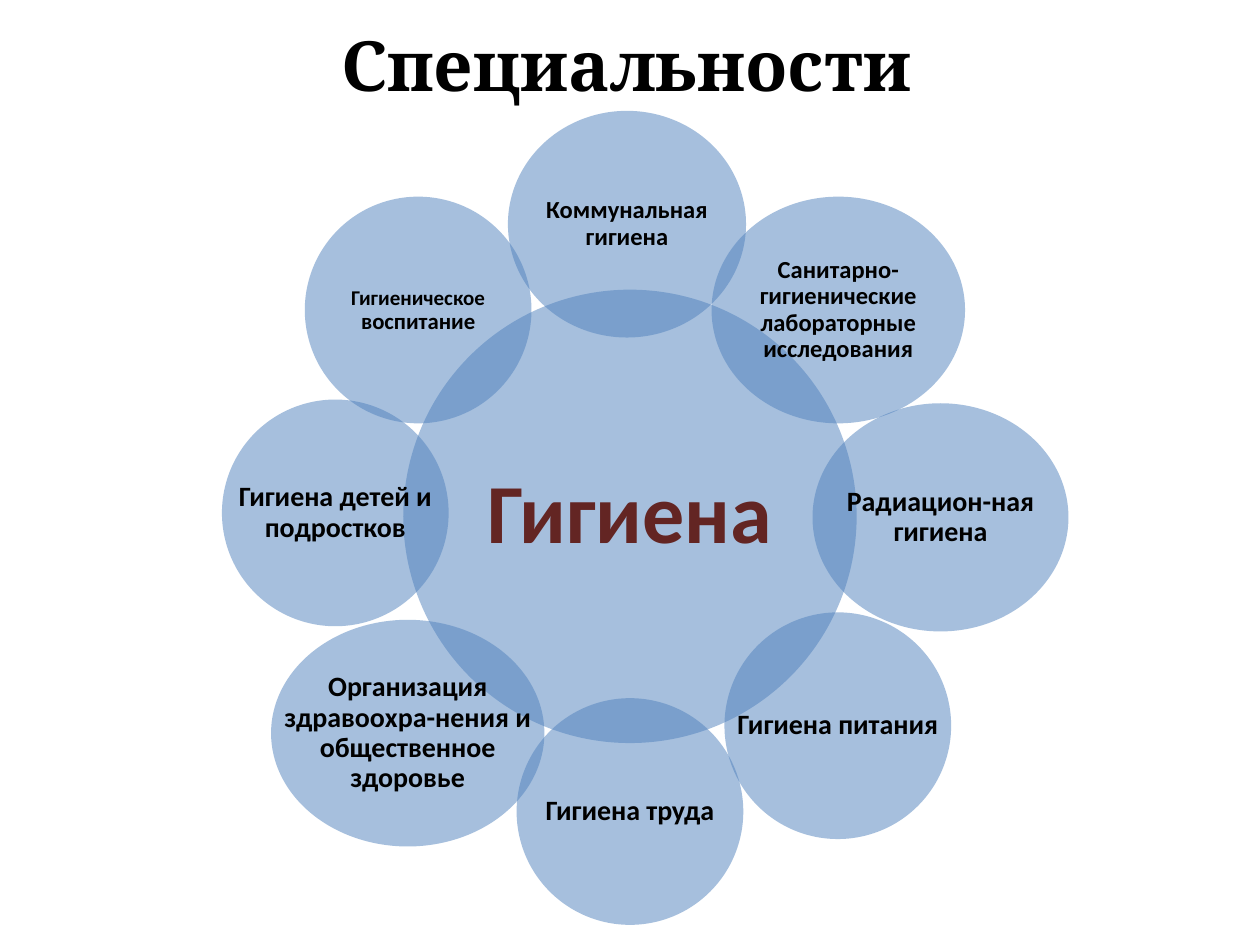
from dataclasses import dataclass

import pptx
import pptx.dml.color
import pptx.enum.shapes
import pptx.enum.text
import pptx.oxml.ns
import pptx.util
from lxml import etree

Cm = pptx.util.Cm


@dataclass(frozen=True)
class Theme:
    circle: str = "4F81BD"
    opacity: int = 50
    black: str = "000000"
    accent: str = "632523"
    heading_font: str = "Cambria"
    body_font: str = "Calibri"
    title: float = 39.6
    hub: float = 48
    large: float = 16
    medium: float = 14
    small: float = 13
    tiny: float = 12


THEME = Theme()


@dataclass(frozen=True)
class Circle:
    """An ellipse given by its centre, in cm, with (text, size) runs."""
    x: float
    y: float
    runs: tuple[tuple[str, float], ...]
    width: float = 4.57
    height: float = 4.57
    color: str = THEME.black
    inset: float = 0.05

    @property
    def box(self) -> tuple[int, int, int, int]:
        return (Cm(self.x - self.width / 2), Cm(self.y - self.height / 2),
                Cm(self.width), Cm(self.height))


HUB = Circle(12.7, 10.41, (("Гигиена", THEME.hub),), 9.14, 9.14,
             THEME.accent, 0.18)
SPECIALTIES = (
    Circle(12.64, 4.52, (("Коммунальная гигиена", THEME.medium),), 4.8),
    Circle(16.9, 6.25, (("Санитарно-гигиенические лабораторные исследования",
                         THEME.medium),), 5.11),
    Circle(18.96, 10.43, (("Радиацион-ная гигиена", THEME.large),), 5.16, 4.6),
    Circle(16.89, 14.63, (("Гигиена питания", THEME.large),)),
    Circle(12.7, 16.36, (("Гигиена труда", THEME.large),)),
    Circle(6.76, 10.34, (("Гигиена детей и подростков", THEME.large),)),
    Circle(8.22, 14.78, (("Организация здравоохра-нения и общественное здоровье",
                          THEME.large),), 5.51),
    Circle(8.43, 6.25, (("Гигиеническое", THEME.tiny),
                        (" воспитание", THEME.small))),
)


def add_text(s, box, runs, *, font: str = THEME.body_font,
             color: str = THEME.black, inset: float = 0.05,
             line_spacing: float = 0.9) -> None:
    """Add centred bold text; the box spans the full width of its circle."""
    tf = s.shapes.add_textbox(*box).text_frame
    tf.word_wrap = True
    tf.vertical_anchor = pptx.enum.text.MSO_ANCHOR.MIDDLE
    tf.margin_left = tf.margin_right = Cm(inset)
    tf.margin_top = tf.margin_bottom = Cm(inset)
    p = tf.paragraphs[0]
    p.alignment = pptx.enum.text.PP_ALIGN.CENTER
    p.line_spacing = line_spacing
    for text, size in runs:
        r = p.add_run()
        r.text = text
        r.font.name = font
        r.font.size = pptx.util.Pt(size)
        r.font.bold = True
        r.font.color.rgb = pptx.dml.color.RGBColor.from_string(color)


def add_circle(s, circle: Circle) -> None:
    sp = s.shapes.add_shape(pptx.enum.shapes.MSO_SHAPE.OVAL, *circle.box)
    sp.shadow.inherit = False
    sp.line.fill.background()
    sp.fill.solid()
    sp.fill.fore_color.rgb = pptx.dml.color.RGBColor.from_string(THEME.circle)
    qn = pptx.oxml.ns.qn
    rgb = sp.element.spPr.find(qn("a:solidFill")).find(qn("a:srgbClr"))
    etree.SubElement(rgb, qn("a:alpha")).set("val", str(THEME.opacity * 1000))
    add_text(s, circle.box, circle.runs, color=circle.color, inset=circle.inset)


def main() -> None:
    prs = pptx.Presentation()
    prs.slide_width, prs.slide_height = Cm(25.4), Cm(19.05)
    s = prs.slides.add_slide(prs.slide_layouts[6])
    add_text(s, (Cm(1.2), Cm(0.4), Cm(22.86), Cm(1.78)),
             (("Специальности", THEME.title),),
             font=THEME.heading_font, line_spacing=1.0)
    for circle in (HUB, *SPECIALTIES):
        add_circle(s, circle)
    prs.save("out.pptx")


if __name__ == "__main__":
    main()
